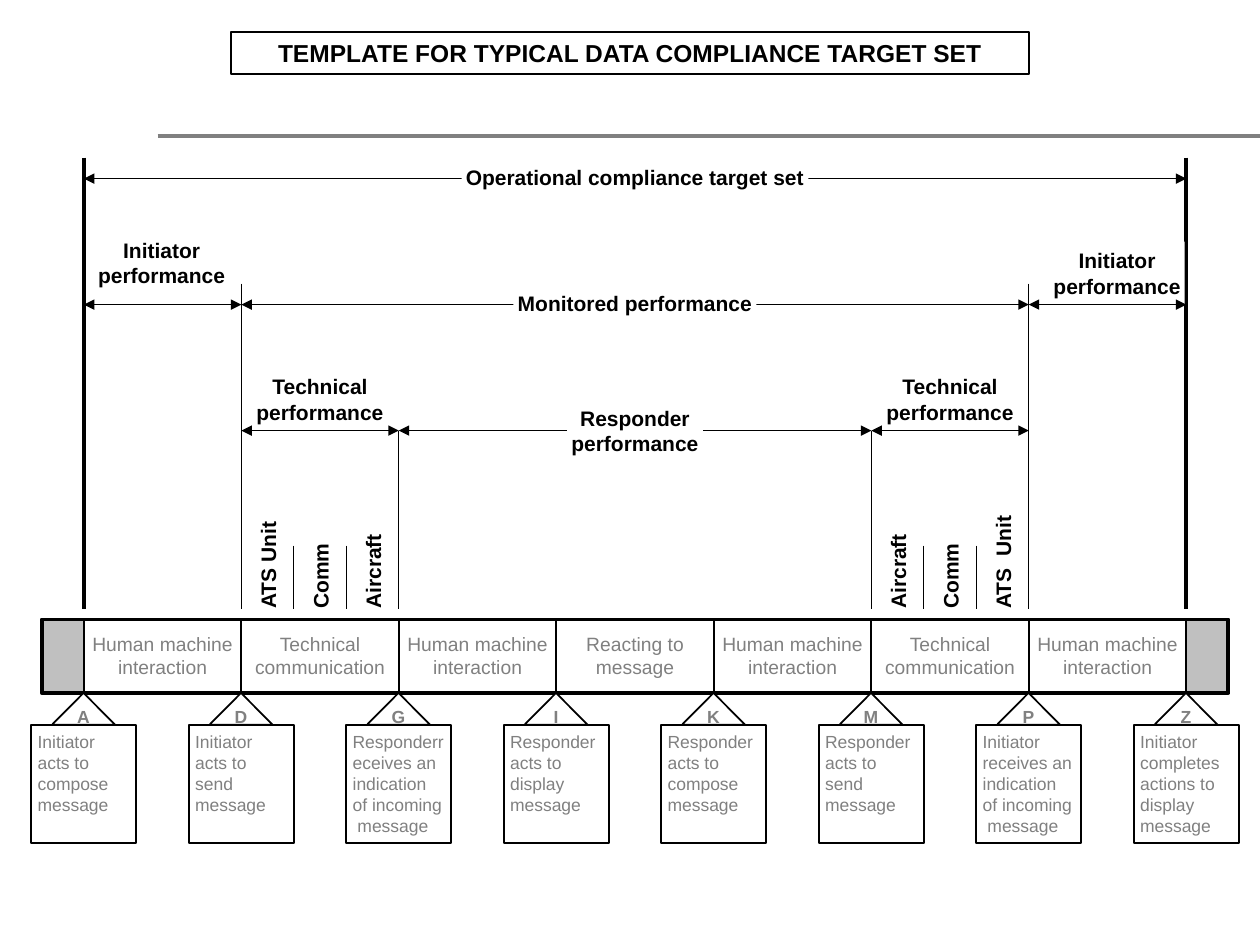
import pptx
import pptx.dml.color
import pptx.enum.shapes
import pptx.enum.text
import pptx.oxml.ns
import pptx.util
from lxml import etree

Cm = pptx.util.Cm
Pt = pptx.util.Pt
ALIGN = pptx.enum.text.PP_ALIGN
ANCHOR = pptx.enum.text.MSO_ANCHOR
SHAPE = pptx.enum.shapes.MSO_SHAPE

WIDTH, HEIGHT = 25.4, 19.05
PITCH = WIDTH / 8
FIRST = 1.69
LINES_BOTTOM = 12.27
BAR_TOP, BAR_HEIGHT = 12.49, 1.48
BAR_BOTTOM = BAR_TOP + BAR_HEIGHT
BLACK, GREY, SILVER, WHITE = "000000", "808080", "C0C0C0", "FFFFFF"


def color(value):
    return pptx.dml.color.RGBColor.from_string(value)


def column(i):
    return FIRST + i * PITCH


class Diagram:
    font = "Arial"

    def __init__(self, prs):
        self.s = prs.slides.add_slide(prs.slide_layouts[5])

    def outline(self, sp, fill, weight):
        if fill:
            sp.fill.solid()
            sp.fill.fore_color.rgb = color(fill)
        else:
            sp.fill.background()
        if weight:
            sp.line.color.rgb = color(BLACK)
            sp.line.width = Pt(weight)
        else:
            sp.line.fill.background()

    def set_text(self, sp, text, size, ink=BLACK, bold=True, align=ALIGN.CENTER,
                 anchor=ANCHOR.TOP, inset=(0, 0.13), wrap=True):
        tf = sp.text_frame
        tf.auto_size = pptx.enum.text.MSO_AUTO_SIZE.NONE
        tf.word_wrap = wrap
        tf.vertical_anchor = anchor
        tf.margin_left = tf.margin_right = Cm(inset[0])
        tf.margin_top = tf.margin_bottom = Cm(inset[1])
        tf.text = text
        p = tf.paragraphs[0]
        p.alignment = align
        p.font.name = self.font
        p.font.size = Pt(size)
        p.font.bold = bold
        p.font.color.rgb = color(ink)

    def title(self, text, x, y, w, h):
        sp = self.s.shapes.title
        sp.left, sp.top, sp.width, sp.height = Cm(x), Cm(y), Cm(w), Cm(h)
        self.outline(sp, WHITE, 1)
        self.set_text(sp, text, 14)

    def box(self, x, y, w, h, fill=WHITE, weight=1, kind=SHAPE.RECTANGLE):
        sp = self.s.shapes.add_shape(kind, Cm(x), Cm(y), Cm(w), Cm(h))
        sp.shadow.inherit = False
        self.outline(sp, fill, weight)
        return sp

    def label(self, text, center, y, w, h):
        self.set_text(self.box(center - w / 2, y, w, h, weight=0), text, 12)

    def upright(self, text, center, bottom, length=2.12, depth=0.76):
        sp = self.s.shapes.add_textbox(
            Cm(center - length / 2), Cm(bottom - length / 2 - depth / 2),
            Cm(length), Cm(depth))
        sp.rotation = 270
        self.set_text(sp, text, 12, align=ALIGN.LEFT)

    def line(self, x1, y1, x2, y2, weight=0.75, ink=BLACK, arrows=False):
        sp = self.s.shapes.add_connector(
            pptx.enum.shapes.MSO_CONNECTOR.STRAIGHT, Cm(x1), Cm(y1), Cm(x2), Cm(y2))
        sp.line.color.rgb = color(ink)
        sp.line.width = Pt(weight)
        if arrows:
            ln = sp._element.spPr.find(pptx.oxml.ns.qn("a:ln"))
            for end in ("a:headEnd", "a:tailEnd"):
                etree.SubElement(ln, pptx.oxml.ns.qn(end), type="triangle")
        etree.SubElement(sp._element.spPr, pptx.oxml.ns.qn("a:effectLst"))

    def vertical(self, i, top, weight=0.75):
        self.line(column(i), top, column(i), LINES_BOTTOM, weight)

    def span(self, start, end, y):
        self.line(column(start), y, column(end), y, 1, arrows=True)

    def stage(self, i, text):
        sp = self.box(column(i), BAR_TOP, PITCH, BAR_HEIGHT)
        self.set_text(sp, text, 11, GREY, False, inset=(0.03, 0.25))

    def event(self, i, letter, text):
        note = self.box(column(i) - 1.06, 14.61, 2.12, 2.38)
        self.set_text(note, text, 10, GREY, False, ALIGN.LEFT, inset=(0.13, 0.13))
        marker = self.box(column(i) - 0.64, BAR_BOTTOM, 1.27, 0.64,
                          kind=SHAPE.ISOSCELES_TRIANGLE)
        self.set_text(marker, letter, 10, GREY, anchor=ANCHOR.MIDDLE,
                      inset=(0.25, 0.13), wrap=False)


def main():
    prs = pptx.Presentation()
    prs.slide_width, prs.slide_height = Cm(WIDTH), Cm(HEIGHT)
    d = Diagram(prs)

    d.title("TEMPLATE FOR TYPICAL DATA COMPLIANCE TARGET SET", 4.66, 0.64, 16.08, 0.85)
    d.line(3.18, 2.74, WIDTH, 2.74, 2.25, GREY)

    for left, top, weight in [(0, 3.18, 2.25), (1, 5.72, 0.75), (2, 8.68, 0.75)]:
        for i in (left, 7 - left):
            d.vertical(i, top, weight)

    for start, end, y, text, top, w, h in [
        (0, 7, 3.6, "Operational compliance target set", 3.18, 6.99, 0.76),
        (1, 6, 6.14, "Monitored performance", 5.72, 4.9, 0.76),
        (2, 5, 8.68, "Responder performance", 8.05, 2.74, 1.27),
    ]:
        d.span(start, end, y)
        d.label(text, column((start + end) / 2), top, w, h)

    for start, y, text, center, top in [
        (0, 6.14, "Initiator performance", 3.26, 4.65),
        (6, 6.14, "Initiator performance", 22.52, 4.87),
        (1, 8.68, "Technical performance", column(1.5), 7.41),
        (5, 8.68, "Technical performance", column(5.5), 7.41),
    ]:
        d.label(text, center, top, 2.73, 1.27)
        d.span(start, start + 1, y)

    for start, names in [(1, ("ATS Unit", "Comm", "Aircraft")),
                         (5, ("Aircraft", "Comm", "ATS  Unit"))]:
        for k, name in enumerate(names):
            d.upright(name, column(start + (2 * k + 1) / 6), LINES_BOTTOM)
        for k in (1, 2):
            d.vertical(start + k / 3, 11)

    for x in (column(0) - 0.85, column(7)):
        d.box(x, BAR_TOP, 0.85, BAR_HEIGHT, SILVER)
    human, technical = "Human machine interaction", "Technical communication"
    for i, text in enumerate([human, technical, human, "Reacting to message",
                              human, technical, human]):
        d.stage(i, text)
    d.box(column(0) - 0.85, BAR_TOP, 7 * PITCH + 1.7, BAR_HEIGHT, None, 2.25)

    events = [
        ("A", "Initiator acts to compose message"),
        ("D", "Initiator acts to send message"),
        ("G", "Responderreceives an indication of incoming  message"),
        ("I", "Responder acts to display message"),
        ("K", "Responder acts to compose message"),
        ("M", "Responder acts to send message"),
        ("P", "Initiator receives an indication of incoming  message"),
        ("Z", "Initiator completes actions to display message"),
    ]
    for i, (letter, text) in enumerate(events):
        d.event(i, letter, text)

    prs.save("out.pptx")


if __name__ == "__main__":
    main()
